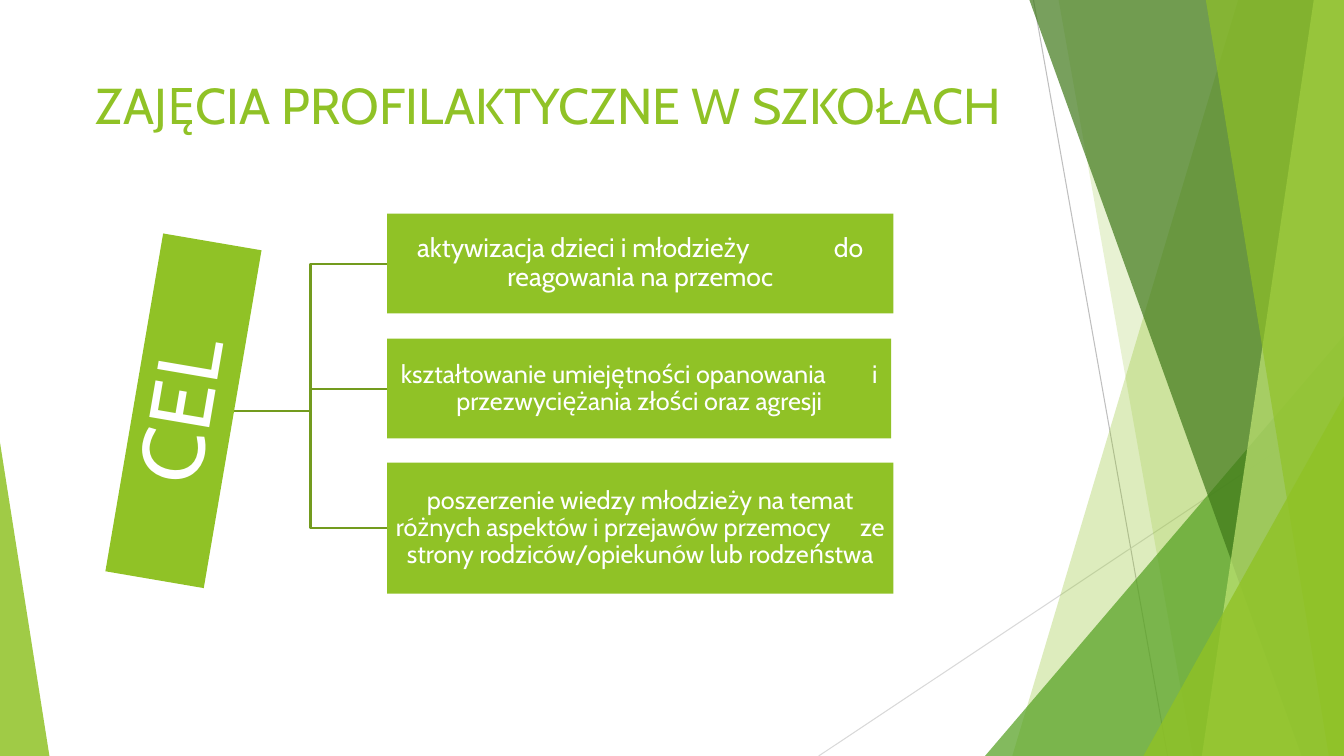
"""Build a slide on the goal of prevention classes in schools."""
from lxml.etree import SubElement
from pptx import Presentation
from pptx.dml.color import RGBColor
from pptx.enum.shapes import MSO_CONNECTOR as Link, MSO_SHAPE as Kind
from pptx.enum.text import MSO_ANCHOR as Anchor, PP_ALIGN as Align
from pptx.oxml.ns import qn
from pptx.util import Inches, Pt

LIME = RGBColor(0x90, 0xC2, 0x26)
LEAF = RGBColor(0x54, 0xA0, 0x21)
PINE = RGBColor(0x3F, 0x78, 0x19)
PALE = RGBColor(0xC0, 0xE4, 0x74)
MOSS = RGBColor(0x73, 0x9B, 0x1E)
GREY = RGBColor(0xBF, 0xBF, 0xBF)
MIST = RGBColor(0xD9, 0xD9, 0xD9)
WHITE = RGBColor(0xFF, 0xFF, 0xFF)
FONT = "Cabin"
WIDE, HIGH = 13.33, 7.5

TITLE = "ZAJĘCIA PROFILAKTYCZNE W SZKOŁACH"
GOAL = "CEL"
AIMS = [
    {"text": ("aktywizacja dzieci i młodzieży", "do reagowania na przemoc"),
     "box": (3.84, 2.12, 5.02, 0.99), "size": 19, "gap": 56},
    {"text": ("kształtowanie umiejętności opanowania", "i przezwyciężania złości oraz agresji"),
     "box": (3.84, 3.36, 5, 0.99), "size": 18, "gap": 29},
    {"text": ("poszerzenie wiedzy młodzieży na temat różnych aspektów i przejawów przemocy",
              "ze strony rodziców/opiekunów lub rodzeństwa"),
     "box": (3.84, 4.59, 5.02, 1.3), "size": 18, "gap": 17},
]
STEM = (2.32, 4.08)
FORK = 3.08

RAYS = [((10.25, 0), (11.58, HIGH), GREY), ((WIDE, 4.03), (8.12, HIGH), MIST)]
DECOR = [
    {"top": 12.28, "base": 10.04, "hue": LIME, "alpha": 30},
    {"top": 10.5, "base": 11.83, "hue": LIME, "alpha": 20},
    {"peak": (9.77, 3.33, 3.56, 4.17), "tip": 1, "hue": LEAF, "alpha": 72},
    {"top": 10.21, "base": 12.91, "hue": PINE, "alpha": 70},
    {"top": 13.03, "base": 11.92, "hue": PALE, "alpha": 70},
    {"top": 11.96, "base": 13.18, "hue": LIME, "alpha": 65},
    {"peak": (11.34, 3.93, 1.99, 3.57), "tip": 1, "hue": LIME, "alpha": 80},
    {"peak": (0, 4.39, 0.49, 3.11), "tip": 0, "hue": LIME, "alpha": 85},
]

deck = Presentation()
deck.slide_width, deck.slide_height = Inches(WIDE), Inches(HIGH)
shapes = deck.slides.add_slide(deck.slide_layouts[6]).shapes


def inch(nums):
    return [Inches(num) for num in nums]


def outline(points, close):
    first, *rest = [tuple(inch(point)) for point in points]
    pen = shapes.build_freeform(*first, scale=1.0)
    pen.add_line_segments(rest, close=close)
    shape = pen.convert_to_shape()
    shape.shadow.inherit = False
    return shape


def paint(shape, hue, alpha=100):
    shape.shadow.inherit = False
    shape.fill.solid()
    shape.fill.fore_color.rgb = hue
    shape.line.fill.background()
    if alpha < 100:
        tone = shape.fill._xPr.find(qn("a:solidFill"))[0]
        SubElement(tone, qn("a:alpha")).set("val", str(alpha * 1000))


def write(shape, parts, size, hue, inset, space=1.0, gap=0):
    frame = shape.text_frame
    style = {"word_wrap": True, "vertical_anchor": Anchor.MIDDLE}
    style.update({f"margin_{side}": Inches(inset) for side in ("left", "top", "right", "bottom")})
    for name, value in style.items():
        setattr(frame, name, value)
    para = frame.paragraphs[0]
    para.alignment, para.line_spacing = Align.CENTER, space
    for part in parts:
        run = para.add_run()
        run.text = part
        run.font.name, run.font.size = FONT, Pt(size)
        run.font.color.rgb = hue
        if part == " ":
            run.font._element.set("spc", str(gap * 100))


for start, end, hue in RAYS:
    ray = shapes.add_connector(Link.STRAIGHT, *inch(start + end))
    ray.line.color.rgb, ray.line.width = hue, Pt(0.75)
    SubElement(ray._element.spPr, qn("a:effectLst"))

for item in DECOR:
    if "peak" in item:
        shape = shapes.add_shape(Kind.ISOSCELES_TRIANGLE, *inch(item["peak"]))
        shape.adjustments[0] = item["tip"]
    else:
        shape = outline([(item["top"], 0), (WIDE, 0), (WIDE, HIGH), (item["base"], HIGH)], True)
    paint(shape, item["hue"], item["alpha"])

title = shapes.add_textbox(*inch((0.74, 0.67, 9.4, 0.74)))
write(title, [TITLE], 36, LIME, 0.05)

for aim in reversed(AIMS):
    left, top, width, height = aim["box"]
    mid = top + height / 2
    branch = outline([STEM, (FORK, STEM[1]), (FORK, mid), (left, mid)], False)
    branch.fill.background()
    branch.line.color.rgb, branch.line.width = MOSS, Pt(1.5)

goal = shapes.add_shape(Kind.RECTANGLE, *inch((0.12, 3.58, 3.4, 0.99)))
goal.rotation = 279.7
paint(goal, LIME)
write(goal, [GOAL], 62, WHITE, 0.04, 0.9)

for aim in AIMS:
    box = shapes.add_shape(Kind.RECTANGLE, *inch(aim["box"]))
    paint(box, LIME)
    lead, tail = aim["text"]
    write(box, [lead, " ", tail], aim["size"], WHITE, 0.01, 0.9, aim["gap"])

deck.save("out.pptx")
